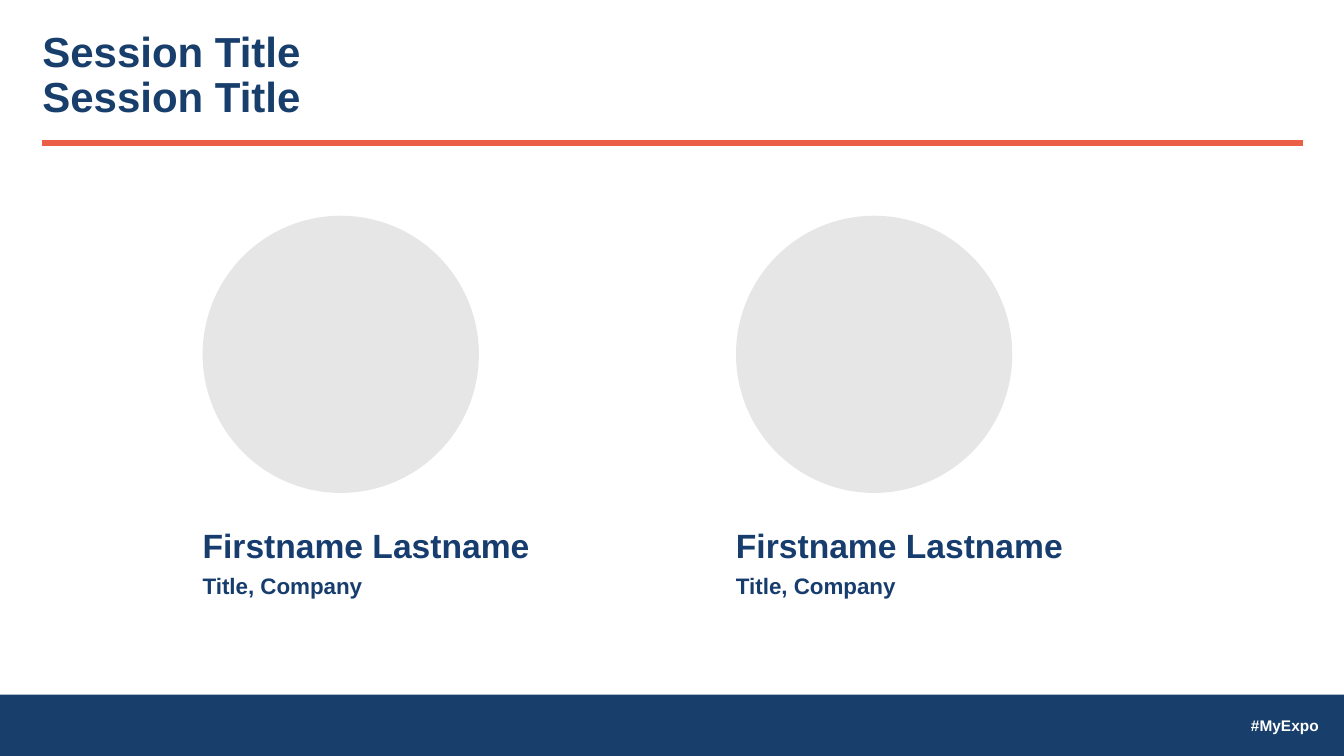
from pptx import Presentation
from pptx.dml.color import RGBColor
from pptx.enum.shapes import MSO_CONNECTOR as Conn, MSO_SHAPE as Kind
from pptx.enum.text import MSO_ANCHOR as Anchor, PP_ALIGN as Align
from pptx.oxml.ns import qn
from pptx.util import Inches, Pt
from lxml.etree import SubElement

NAVY = RGBColor(0x18, 0x3E, 0x6C)
INK = RGBColor(0x17, 0x3D, 0x6E)
CORAL = RGBColor(0xEA, 0x5F, 0x45)
GREY = RGBColor(0xE7, 0xE6, 0xE6)
WHITE = RGBColor(0xFF, 0xFF, 0xFF)


def write(shape, lines, size, color, align=Align.LEFT, anchor=Anchor.TOP, space=1.0):
    """Fill a shape with bold lines of one paragraph."""
    frame = shape.text_frame
    frame.word_wrap = True
    frame.vertical_anchor = anchor
    frame.margin_left = frame.margin_right = Inches(0)
    frame.margin_top = frame.margin_bottom = Inches(0)
    para = frame.paragraphs[0]
    para.alignment = align
    para.line_spacing = space
    for index, line in enumerate(lines):
        if index:
            para.add_line_break()
        run = para.add_run()
        run.text = line
        font = run.font
        font.name = "Arial"
        font.size = Pt(size)
        font.bold = True
        font.color.rgb = color


def add_label(slide, box, text, size, color, **style):
    """Add a text box with one line of text."""
    label = slide.shapes.add_textbox(*map(Inches, box))
    write(label, [text], size, color, **style)


def add_shape(slide, kind, box, color):
    """Add a plain filled shape."""
    shape = slide.shapes.add_shape(kind, *map(Inches, box))
    shape.shadow.inherit = False
    shape.fill.solid()
    shape.fill.fore_color.rgb = color
    shape.line.fill.background()


def add_title(slide, lines):
    """Place and format the session title."""
    title = slide.shapes.title
    title.left, title.top = Inches(0.42), Inches(0.31)
    title.width, title.height = Inches(12.5), Inches(0.91)
    write(title, lines, 30, NAVY, space=0.9)


def add_rule(slide, left, right, top):
    """Add the line under the title."""
    rule = slide.shapes.add_connector(
        Conn.STRAIGHT, Inches(left), Inches(top), Inches(right), Inches(top))
    rule.line.color.rgb = CORAL
    rule.line.width = Pt(4)
    SubElement(rule.element.spPr, qn("a:effectLst"))


def add_person(slide, left, name, role):
    """Add a speaker's portrait circle, name and role."""
    add_shape(slide, Kind.OVAL, (left, 2.14, 2.74, 2.75), GREY)
    add_label(slide, (left, 5.21, 4.24, 0.4), name, 24, INK)
    add_label(slide, (left, 5.68, 4.24, 0.27), role, 16, INK)


def main():
    """Build and save the speaker slide."""
    deck = Presentation()
    deck.slide_width, deck.slide_height = Inches(13.33), Inches(7.5)
    slide = deck.slides.add_slide(deck.slide_layouts[5])
    add_shape(slide, Kind.RECTANGLE, (0, 6.89, 13.33, 0.61), NAVY)
    add_label(slide, (2.17, 7.03, 10.91, 0.36), "#MyExpo", 11, WHITE,
              align=Align.RIGHT, anchor=Anchor.MIDDLE, space=0.9)
    add_title(slide, ["Session Title", "Session Title"])
    add_rule(slide, 0.42, 12.92, 1.42)
    for left in (2.01, 7.3):
        add_person(slide, left, "Firstname Lastname", "Title, Company")
    deck.save("out.pptx")


if __name__ == "__main__":
    main()
